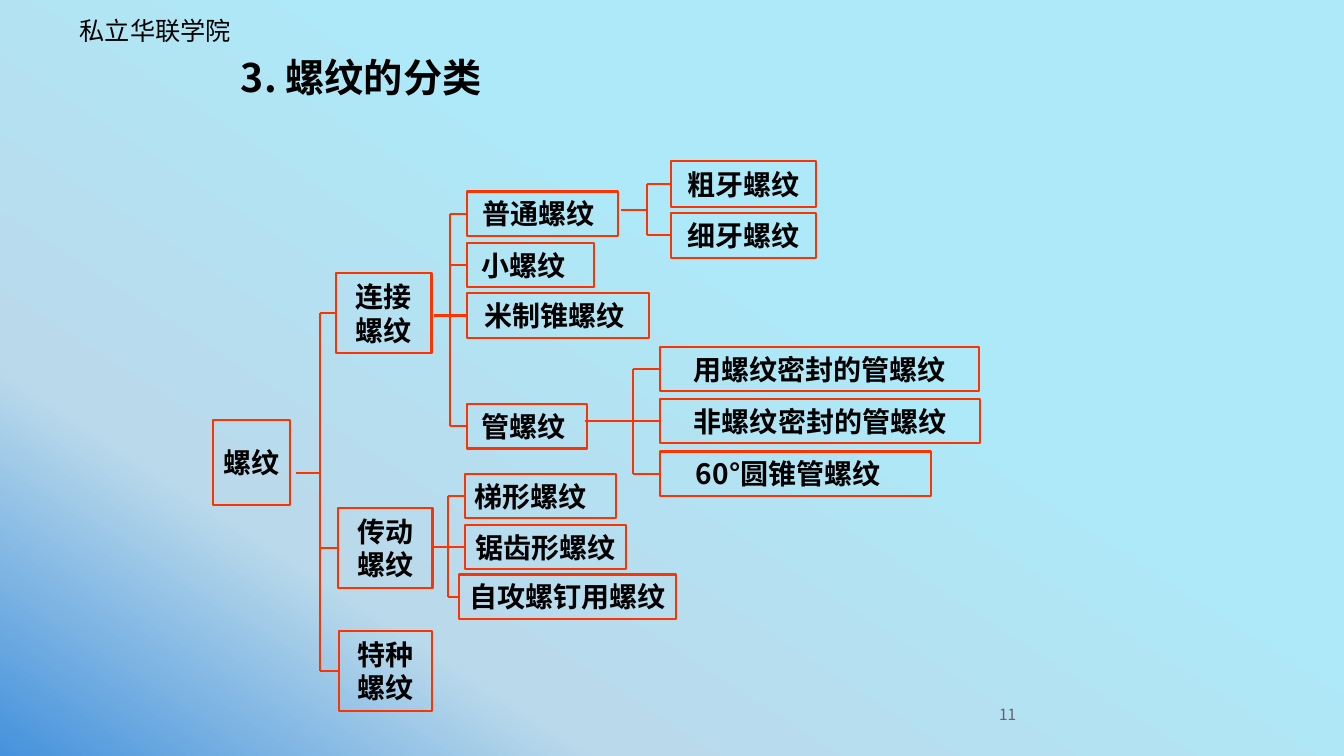
from dataclasses import dataclass

import lxml.etree
import pptx
import pptx.dml.color
import pptx.enum.shapes
import pptx.enum.text
import pptx.oxml.ns
import pptx.util

ANCHOR = pptx.enum.text.MSO_ANCHOR
ALIGN = pptx.enum.text.PP_ALIGN


@dataclass(frozen=True)
class Theme:
    ink: str = "000000"
    muted: str = "636363"
    accent: str = "FF3300"
    sky: tuple = ((0, "4692DC"), (24, "BADAEB"), (62, "ADE9F8"))
    sky_angle: int = 57
    sans: str = "Noto Sans CJK SC"
    header_font: str = "Noto Sans CJK JP"
    serif: str = "Times New Roman"
    title_size: int = 28
    node_size: int = 20
    header_size: int = 18
    number_size: int = 11
    line_width: float = 1.5


THEME = Theme()

# Grid: ten columns and ten rows to the inch
COLUMNS, ROWS = 133.3, 75
ONE_LINE, TWO_LINES = 4.4, 7.9

# Key, text, left column, top row, width, height, font, extra right margin
NODES = [
    ("root", "螺纹", 21.1, 41.7, 7.7, 8.4, THEME.serif, 0),
    ("joining", "连接螺纹", 33.3, 27.1, 9.5, TWO_LINES, THEME.serif, 0),
    ("driving", "传动螺纹", 33.5, 50.4, 9.4, TWO_LINES, THEME.serif, 0),
    ("special", "特种螺纹", 33.6, 62.6, 9.3, TWO_LINES, THEME.serif, 0),
    ("common", "普通螺纹", 46.3, 19, 15, ONE_LINE, THEME.serif, 0.7),
    ("small", "小螺纹", 46.3, 24.1, 12.6, ONE_LINE, THEME.serif, 1.4),
    ("metric", "米制锥螺纹", 46.3, 29.1, 18.1, ONE_LINE, THEME.serif, 0.7),
    ("pipe", "管螺纹", 46.3, 40.1, 11.9, ONE_LINE, THEME.serif, 0.7),
    ("coarse", "粗牙螺纹", 66.6, 16, 14.3, 4.5, THEME.serif, 0),
    ("fine", "细牙螺纹", 66.6, 21.1, 14.3, 4.5, THEME.serif, 0),
    ("sealed", "用螺纹密封的管螺纹", 65.5, 34.4, 31.6, ONE_LINE, THEME.sans, 0),
    ("unsealed", "非螺纹密封的管螺纹", 65.5, 39.6, 31.7, ONE_LINE, THEME.sans, 0),
    ("conical", "60°圆锥管螺纹", 65.5, 44.8, 26.8, ONE_LINE, THEME.sans, 1.4),
    ("trapezoid", "梯形螺纹", 46.1, 47, 15, ONE_LINE, THEME.serif, 1.9),
    ("sawtooth", "锯齿形螺纹", 46.1, 52.1, 16, ONE_LINE, THEME.serif, 0),
    ("tapping", "自攻螺钉用螺纹", 45.5, 57, 21.6, ONE_LINE, THEME.serif, 0),
]

# Stem column, stem row, trunk column, children, child that the stem runs on to
BRANCHES = [
    (29.4, 46.9, 31.7, ("joining", "driving", "special"), None),
    (43, 31.3, 44.6, ("common", "small", "metric", "pipe"), "metric"),
    (43, 54.3, 44.4, ("trapezoid", "sawtooth", "tapping"), "sawtooth"),
    (61.6, 20.8, 64.2, ("coarse", "fine"), None),
    (58, 41.8, 62.8, ("sealed", "unsealed", "conical"), "unsealed"),
]


def grid(units):
    return pptx.util.Inches(units / 10)


def paint_background(page):
    fill = page.background.fill
    fill.gradient()
    fill.gradient_angle = THEME.sky_angle
    qn = pptx.oxml.ns.qn
    stops = next(page.element.iter(qn("a:gsLst")))
    for stop in list(stops):
        stops.remove(stop)
    for percent, colour in THEME.sky:
        stop = lxml.etree.SubElement(stops, qn("a:gs"), pos=str(percent * 1000))
        lxml.etree.SubElement(stop, qn("a:srgbClr"), val=colour)


def set_text(box, text, size, font, colour=THEME.ink, bold=False,
             align=ALIGN.LEFT, anchor=ANCHOR.MIDDLE, wrap=True):
    frame = box.text_frame
    frame.text = text
    frame.auto_size = pptx.enum.text.MSO_AUTO_SIZE.NONE
    frame.word_wrap = wrap
    frame.vertical_anchor = anchor
    para = frame.paragraphs[0]
    para.alignment = align
    span = para.runs[0]
    span.font.size = pptx.util.Pt(size)
    span.font.bold = bold
    span.font.name = font
    span.font.color.rgb = pptx.dml.color.RGBColor.from_string(colour)
    # Chinese glyphs always come from a sans face
    east_asian = THEME.sans if font == THEME.serif else font
    properties = span.font.color and para.runs[0]._r.get_or_add_rPr()
    lxml.etree.SubElement(properties, pptx.oxml.ns.qn("a:ea"), typeface=east_asian)
    return para


def set_margins(box, units):
    frame = box.text_frame
    frame.margin_left = frame.margin_right = grid(units)
    frame.margin_top = frame.margin_bottom = grid(units)


def add_label(page, text, left, top, width, height, size, font, colour, anchor):
    box = page.shapes.add_textbox(*map(grid, (left, top, width, height)))
    set_text(box, text, size, font, colour, anchor=anchor)
    set_margins(box, 0.5)


def add_title(page, text):
    title = page.shapes.title
    title.left, title.top, title.width, title.height = map(grid, (23.4, 5.1, 85, 5.7))
    para = set_text(title, text, THEME.title_size, THEME.sans, bold=True)
    para.line_spacing = 0.9
    set_margins(title, 0.5)


def style_line(line):
    line.color.rgb = pptx.dml.color.RGBColor.from_string(THEME.accent)
    line.width = pptx.util.Pt(THEME.line_width)


def add_node(page, text, left, top, width, height, font, extra):
    box = page.shapes.add_shape(pptx.enum.shapes.MSO_SHAPE.RECTANGLE,
                                *map(grid, (left, top, width, height)))
    box.shadow.inherit = False
    box.fill.background()
    style_line(box.line)
    set_text(box, text, THEME.node_size, font, bold=True, align=ALIGN.CENTER,
             wrap=height == TWO_LINES)
    box.text_frame.margin_left = grid(1)
    box.text_frame.margin_right = grid(1 + extra)
    return box


def add_line(page, start, end, target=None):
    line = page.shapes.add_connector(pptx.enum.shapes.MSO_CONNECTOR.STRAIGHT,
                                     *start, *end)
    if target is not None:
        line.end_connect(target, 1)
    style_line(line.line)
    properties = line._element.spPr
    lxml.etree.SubElement(properties, pptx.oxml.ns.qn("a:effectLst"))


def add_branch(page, boxes, stem, row, trunk, children, through):
    stem, row, trunk = map(grid, (stem, row, trunk))
    middles = {key: boxes[key].top + boxes[key].height // 2 for key in children}
    add_line(page, (trunk, middles[children[0]]), (trunk, middles[children[-1]]))
    if through is None:
        add_line(page, (stem, row), (trunk, row))
    for key, middle in middles.items():
        start = stem if key == through else trunk
        add_line(page, (start, middle), (boxes[key].left, middle), boxes[key])


def main():
    deck = pptx.Presentation()
    deck.slide_width, deck.slide_height = grid(COLUMNS), grid(ROWS)
    page = deck.slides.add_slide(deck.slide_layouts[5])
    paint_background(page)

    # Header, title and page number
    add_label(page, "私立华联学院", 7.4, 1, 29.4, 4, THEME.header_size,
              THEME.header_font, THEME.ink, ANCHOR.TOP)
    add_title(page, "3. 螺纹的分类")
    add_label(page, "11", 98.6, 69.4, 2.8, 2.9, THEME.number_size,
              THEME.sans, THEME.muted, ANCHOR.MIDDLE)

    # Classification tree
    boxes = {key: add_node(page, *node) for key, *node in NODES}
    for branch in BRANCHES:
        add_branch(page, boxes, *branch)

    deck.save("out.pptx")


if __name__ == "__main__":
    main()
